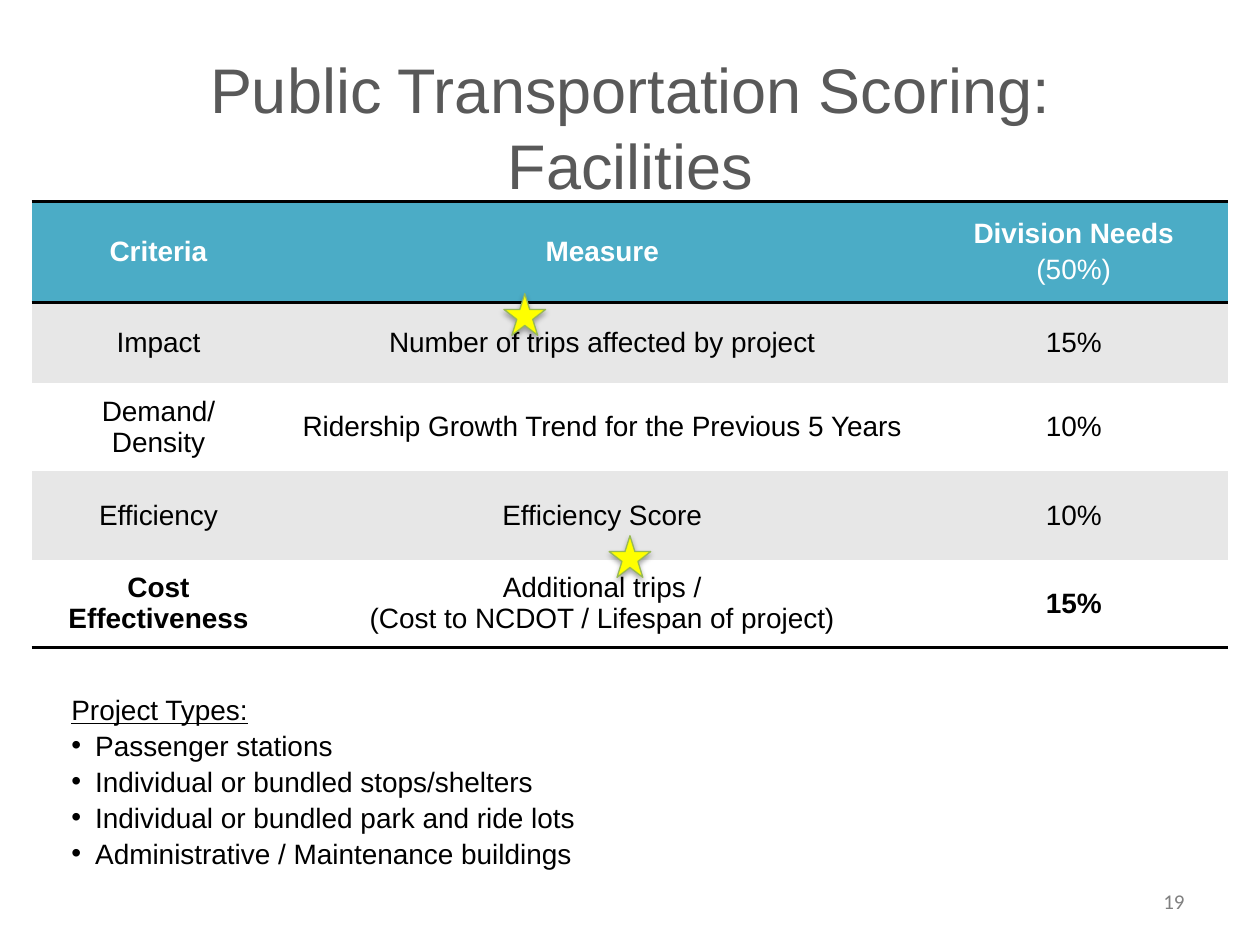
"""Build the public transportation facilities scoring slide."""
import pptx
import pptx.dml.color
import pptx.enum.shapes
import pptx.enum.text
import pptx.oxml
import pptx.oxml.ns
import pptx.util

Cm = pptx.util.Cm
Pt = pptx.util.Pt
ALIGN = pptx.enum.text.PP_ALIGN
ANCHOR = pptx.enum.text.MSO_ANCHOR

TITLE = "Public Transportation Scoring:\vFacilities"
ROWS = [
    (["Criteria"], ["Measure"], ["Division Needs", "(50%)"]),
    (["Impact"], ["Number of trips affected by project"], ["15%"]),
    (["Demand/", "Density"], ["Ridership Growth Trend for the Previous 5 Years"], ["10%"]),
    (["Efficiency"], ["Efficiency Score"], ["10%"]),
    (["Cost Effectiveness"],
     ["Additional trips /", "(Cost to NCDOT / Lifespan of project)"], ["15%"]),
]
BOLD_TEXTS = {"Criteria", "Measure", "Division Needs"}
LAST_ROW_BOLD_COLUMNS = {0, 2}
PROJECT_HEADING = "Project Types:"
PROJECT_TYPES = [
    "Passenger stations",
    "Individual or bundled stops/shelters",
    "Individual or bundled park and ride lots",
    "Administrative / Maintenance buildings",
]
PAGE_NUMBER = "19"

COLORS = {
    "title": "595959", "header": "4BACC6", "band": "E7E7E7", "white": "FFFFFF",
    "black": "000000", "page": "808080", "star": "FFFF00", "star_line": "98B955",
}
COLUMN_WIDTHS = [5.11, 12.78, 6.23]
ROW_HEIGHTS = [2.03, 1.63, 1.78, 1.78, 1.78]
TABLE_BOX = (0.64, 4.06, sum(COLUMN_WIDTHS), sum(ROW_HEIGHTS))
TITLE_BOX = (0.64, 1.27, 24.13, 2.54)
PAGE_BOX = (18.21, 17.65, 5.92, 1.02)
PROJECT_BOX = (1.19, 13.79, 22.3, 3.68)
STAR_POSITIONS = [(10.16, 5.92), (12.28, 10.8)]
STAR_SIZE = 0.84
BULLET_INDENT = 0.48
NO_STYLE_TABLE = "{2D5ABB26-0587-4C30-8999-92F81FD0307C}"
NAMESPACE = pptx.oxml.ns.nsdecls("a")


def color(name):
    return pptx.dml.color.RGBColor.from_string(COLORS[name])


def apply(target, values):
    for name, value in values.items():
        setattr(target, name, value)


def fill_solid(target, name):
    target.fill.solid()
    target.fill.fore_color.rgb = color(name)


def format_font(paragraph, color_name, **values):
    apply(paragraph.font, {"name": "Arial", "size": Pt(16), **values})
    paragraph.font.color.rgb = color(color_name)


def add_paragraphs(frame, texts):
    frame.text = "\n".join(texts)
    return frame.paragraphs


def add_text_box(slide, box, texts, **frame_values):
    shape = slide.shapes.add_textbox(*map(Cm, box))
    apply(shape.text_frame, {"word_wrap": True, **frame_values})
    return add_paragraphs(shape.text_frame, texts)


def add_border(cell, side):
    cell._tc.get_or_add_tcPr().insert(0, pptx.oxml.parse_xml(
        f'<a:{side} {NAMESPACE} w="{Pt(2)}"><a:solidFill>'
        f'<a:srgbClr val="{COLORS["black"]}"/></a:solidFill></a:{side}>'))


def add_title(slide):
    title = slide.shapes.title
    apply(title, dict(zip(("left", "top", "width", "height"), map(Cm, TITLE_BOX))))
    title.text_frame.text = TITLE
    title.text_frame.vertical_anchor = ANCHOR.MIDDLE
    paragraph = title.text_frame.paragraphs[0]
    paragraph.alignment = ALIGN.CENTER
    format_font(paragraph, "title", size=Pt(36))


def format_cell(cell, texts, row, column):
    header, last = row == 0, row == len(ROWS) - 1
    cell.vertical_anchor = ANCHOR.MIDDLE
    fill_solid(cell, "header" if header else "band" if row % 2 else "white")
    if header:
        apply(cell, {"margin_top": 0, "margin_bottom": 0})
    if header or last:
        add_border(cell, "lnB")
    if header:
        add_border(cell, "lnT")
    for index, paragraph in enumerate(add_paragraphs(cell.text_frame, texts)):
        paragraph.alignment = ALIGN.CENTER
        if header and index:
            paragraph.space_before = Pt(3.2)
        bold = texts[index] in BOLD_TEXTS or (last and column in LAST_ROW_BOLD_COLUMNS)
        format_font(paragraph, "white" if header else "black", bold=bold)


def add_scoring_table(slide):
    frame = slide.shapes.add_table(len(ROWS), len(COLUMN_WIDTHS), *map(Cm, TABLE_BOX))
    table = frame.table
    apply(table, {"first_row": False, "horz_banding": False})
    table._tbl.tblPr.find(pptx.oxml.ns.qn("a:tableStyleId")).text = NO_STYLE_TABLE
    for column, width in zip(table.columns, COLUMN_WIDTHS):
        column.width = Cm(width)
    for row, height in zip(table.rows, ROW_HEIGHTS):
        row.height = Cm(height)
    for row, cells in enumerate(ROWS):
        for column, texts in enumerate(cells):
            format_cell(table.cell(row, column), texts, row, column)


def add_project_types(slide):
    paragraphs = add_text_box(slide, PROJECT_BOX, [PROJECT_HEADING, *PROJECT_TYPES])
    for index, paragraph in enumerate(paragraphs):
        paragraph.line_spacing = 1.07
        if index:
            properties = paragraph._p.get_or_add_pPr()
            properties.set("marL", str(Cm(BULLET_INDENT)))
            properties.set("indent", str(-Cm(BULLET_INDENT)))
            for element in ('buFont {} typeface="Arial"', 'buChar {} char="•"'):
                properties.append(pptx.oxml.parse_xml(f"<a:{element.format(NAMESPACE)}/>"))
        format_font(paragraph, "black", underline=index == 0)


def add_page_number(slide):
    paragraph = add_text_box(slide, PAGE_BOX, [PAGE_NUMBER],
                             vertical_anchor=ANCHOR.MIDDLE)[0]
    paragraph.alignment = ALIGN.RIGHT
    format_font(paragraph, "page", name="Calibri", size=Pt(12))


def add_star(slide, left, top):
    star = slide.shapes.add_shape(pptx.enum.shapes.MSO_SHAPE.STAR_5_POINT,
                                  *map(Cm, (left, top, STAR_SIZE, STAR_SIZE)))
    fill_solid(star, "star")
    star.line.color.rgb = color("star_line")
    star.line.width = Pt(0.75)
    star.shadow.inherit = False
    effects = star._element.spPr.find(pptx.oxml.ns.qn("a:effectLst"))
    effects.append(pptx.oxml.parse_xml(
        f'<a:outerShdw {NAMESPACE} blurRad="{Pt(3.1)}" dist="{Pt(1.8)}" dir="5400000" '
        f'rotWithShape="0"><a:srgbClr val="{COLORS["black"]}">'
        '<a:alpha val="35000"/></a:srgbClr></a:outerShdw>'))


def main():
    presentation = pptx.Presentation()
    apply(presentation, {"slide_width": Cm(25.4), "slide_height": Cm(19.05)})
    slide = presentation.slides.add_slide(presentation.slide_layouts[5])
    add_title(slide)
    add_scoring_table(slide)
    add_page_number(slide)
    add_project_types(slide)
    for left, top in STAR_POSITIONS:
        add_star(slide, left, top)
    presentation.save("out.pptx")


if __name__ == "__main__":
    main()
